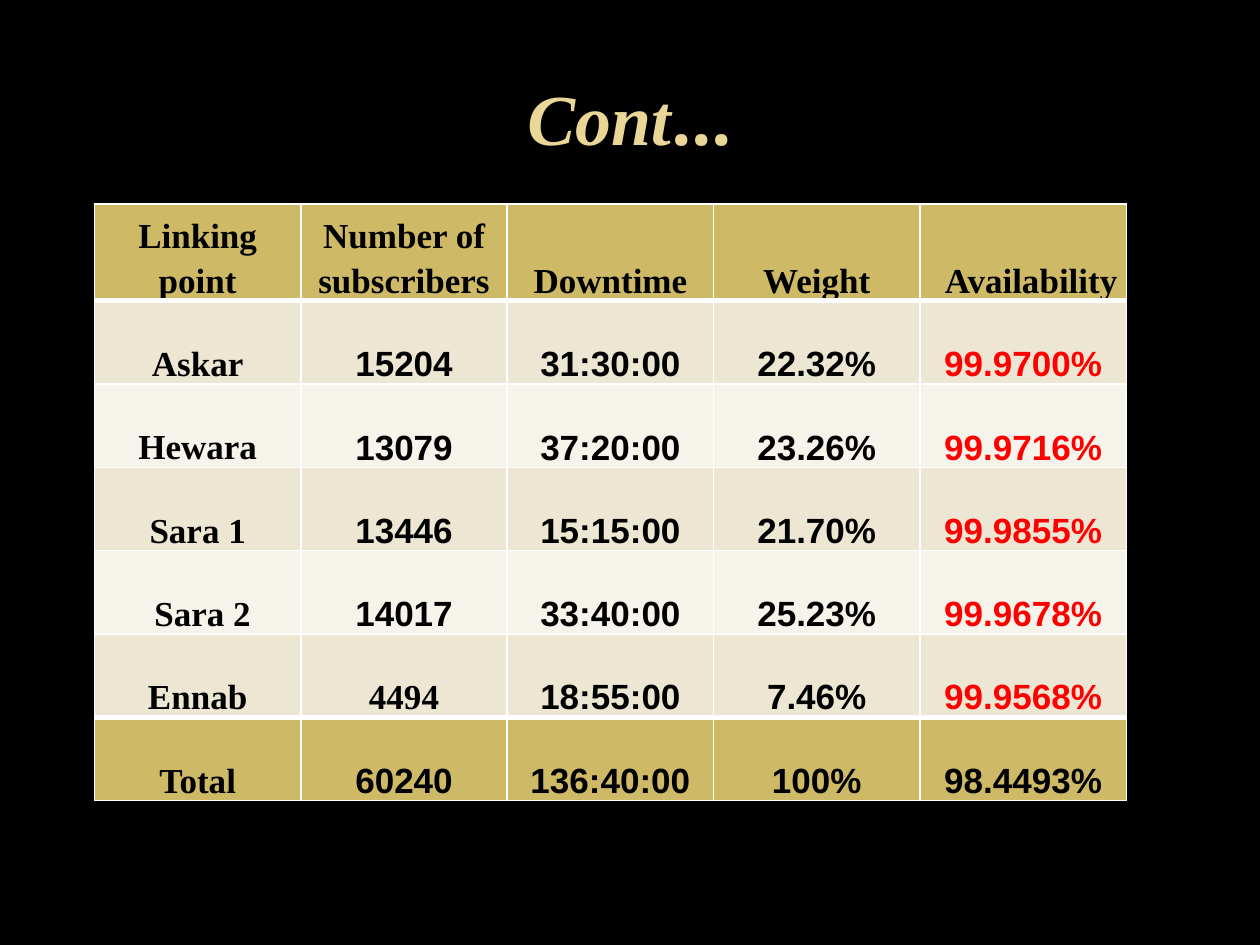
from dataclasses import dataclass

from lxml import etree
from pptx import Presentation
from pptx import util as u
from pptx.dml.color import RGBColor
from pptx.enum import text
from pptx.oxml import ns


@dataclass(frozen=True)
class Theme:
    backdrop: str = "000000"
    heading: str = "EAD696"
    ink: str = "000000"
    alert: str = "FF0000"
    gold: str = "CEB966"
    bands: tuple = ("EDE6D3", "F6F3EA")
    rule: str = "FFFFFF"
    thin: float = 1
    thick: float = 3
    serif: str = "Times New Roman"
    sans: str = "Open Sans"
    digits: str = "Arial"
    heading_size: int = 41
    table_size: int = 20


THEME = Theme()
WIDTH, HEIGHT = 10, 7.5
HEADING_BOX = (0.05, 0.04, 0.9, 1 / 6)  # shares of the slide
TABLE_BOX = (0.075, 0.216, 0.819, 0.629)
HEADER_SHARE = 0.159  # header row's share of the table height

OUTAGES = [
    ("Linking point", "Number of subscribers", "Downtime", "Weight", "Availability"),
    ("Askar", "15204", "31:30:00", "22.32%", "99.9700%"),
    ("Hewara", "13079", "37:20:00", "23.26%", "99.9716%"),
    ("Sara 1", "13446", "15:15:00", "21.70%", "99.9855%"),
    ("Sara 2 ", "14017", "33:40:00", "25.23%", "99.9678%"),
    ("Ennab", "4494", "18:55:00", "7.46%", "99.9568%"),
    ("Total", "60240", "136:40:00", "100%", "98.4493%"),
]
LEFT_TO_RIGHT = {"4494"}


def apply(target, values):
    for name, value in values.items():
        setattr(target, name, value)


def to_emu(box):
    return [u.Inches(share * side) for share, side in zip(box, (WIDTH, HEIGHT) * 2)]


def add_words(paragraph, words, color, **font):
    run = paragraph.add_run()
    run.text = words
    apply(run.font, font)
    run.font.color.rgb = RGBColor.from_string(color)
    return run


def set_borders(cell, widths):
    """Draw the cell's edges; widths run left, right, top, bottom."""
    props = cell._tc.get_or_add_tcPr()
    for edge, width in zip("LRTB", widths):
        line = etree.SubElement(props, ns.qn(f"a:ln{edge}"), w=str(u.Pt(width)))
        fill = etree.SubElement(line, ns.qn("a:solidFill"))
        etree.SubElement(fill, ns.qn("a:srgbClr"), val=THEME.rule)


def add_heading(slide, box):
    frame = slide.shapes.add_textbox(*to_emu(box)).text_frame
    apply(frame, {"word_wrap": True, "vertical_anchor": text.MSO_ANCHOR.MIDDLE})
    line = frame.paragraphs[0]
    line.alignment = text.PP_ALIGN.CENTER
    for words, face, slanted in (("Cont", THEME.serif, True), ("...", THEME.sans, False)):
        add_words(line, words, THEME.heading, name=face, italic=slanted,
                  bold=True, size=u.Pt(THEME.heading_size))


def fill_cell(cell, words, color, fill, widths, align):
    set_borders(cell, widths)
    cell.fill.solid()
    cell.fill.fore_color.rgb = RGBColor.from_string(fill)
    apply(cell, {"margin_left": u.Inches(0.07), "margin_right": u.Inches(0.07),
                 "margin_top": 0, "margin_bottom": 0,
                 "vertical_anchor": text.MSO_ANCHOR.BOTTOM})
    line = cell.text_frame.paragraphs[0]
    apply(line, {"alignment": align, "line_spacing": 1.15})
    run = add_words(line, words, color, name=THEME.serif, bold=True,
                    size=u.Pt(THEME.table_size))
    # Right-to-left lines draw their digits in the complex-script face
    if words not in LEFT_TO_RIGHT:
        line._p.get_or_add_pPr().set("rtl", "1")
        etree.SubElement(run._r.get_or_add_rPr(), ns.qn("a:cs"), typeface=THEME.digits)


def add_outage_table(slide, box):
    left, top, width, height = to_emu(box)
    last, columns = len(OUTAGES) - 1, len(OUTAGES[0])
    table = slide.shapes.add_table(last + 1, columns, left, top, width, height).table
    apply(table, {"first_row": True, "last_row": True, "horz_banding": True})

    # Equal columns; a taller header over equal rows
    for column in table.columns:
        column.width = width // columns
    header_height = int(height * HEADER_SHARE)
    for r, row in enumerate(table.rows):
        row.height = (height - header_height) // last if r else header_height

    for r, record in enumerate(OUTAGES):
        outer = r in (0, last)
        fill = THEME.gold if outer else THEME.bands[(r - 1) % 2]
        above = THEME.thick if r in (1, last) else THEME.thin
        below = THEME.thick if r in (0, last - 1) else THEME.thin
        for c, words in enumerate(record):
            availability = c == columns - 1
            color = THEME.alert if availability and not outer else THEME.ink
            align = text.PP_ALIGN.RIGHT if availability and r == 0 else text.PP_ALIGN.CENTER
            fill_cell(table.cell(r, c), words, color, fill,
                      (THEME.thin, THEME.thin, above, below), align)


def main():
    deck = Presentation()
    apply(deck, {"slide_width": u.Inches(WIDTH), "slide_height": u.Inches(HEIGHT)})
    slide = deck.slides.add_slide(deck.slide_layouts[6])
    slide.background.fill.solid()
    slide.background.fill.fore_color.rgb = RGBColor.from_string(THEME.backdrop)
    add_heading(slide, HEADING_BOX)
    add_outage_table(slide, TABLE_BOX)
    deck.save("out.pptx")


if __name__ == "__main__":
    main()
